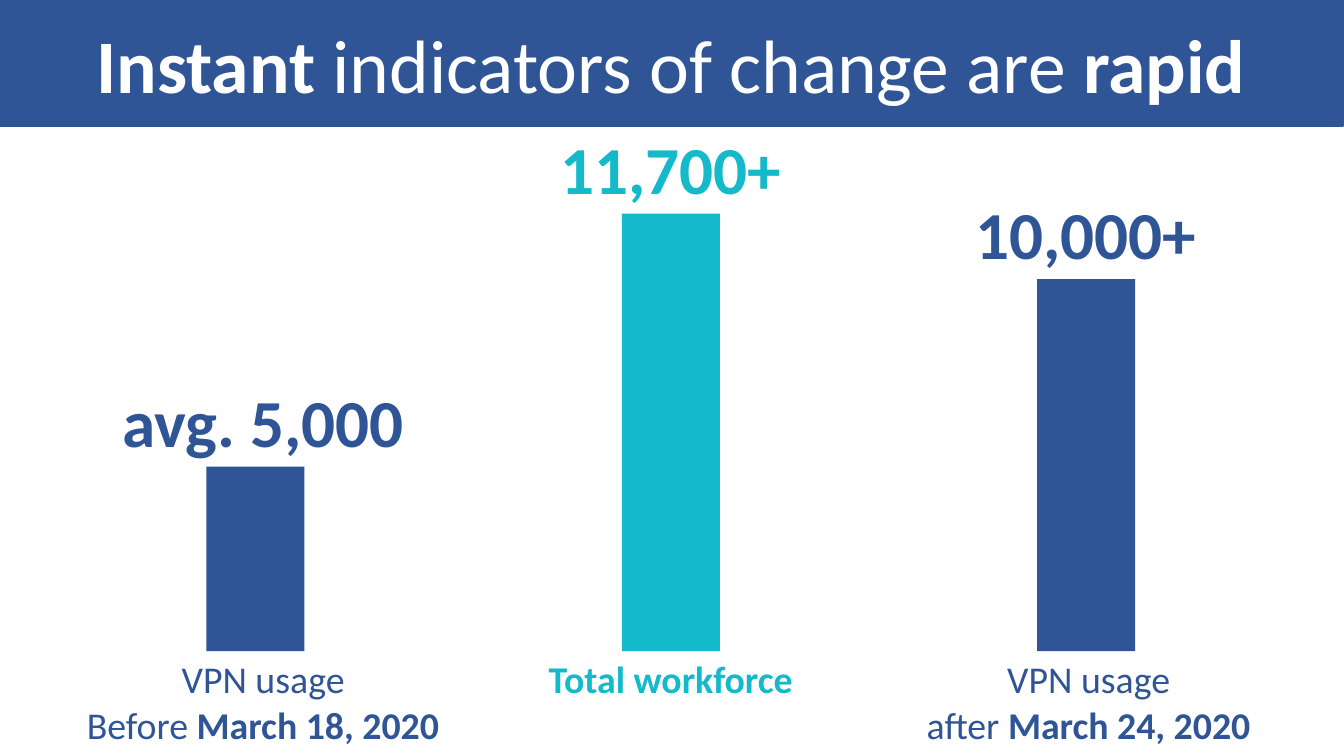
from dataclasses import dataclass

from pptx import Presentation
from pptx.dml.color import RGBColor
from pptx.enum.shapes import MSO_SHAPE
from pptx.enum.text import MSO_ANCHOR, MSO_AUTO_SIZE, PP_ALIGN
from pptx.util import Pt

RECT = MSO_SHAPE.RECTANGLE
MIDDLE = MSO_ANCHOR.MIDDLE
CENTER = PP_ALIGN.CENTER
NO_FIT = MSO_AUTO_SIZE.NONE
GROW = MSO_AUTO_SIZE.SHAPE_TO_FIT_TEXT
TITLE_ONLY = 5


@dataclass(frozen=True)
class Theme:
    font: str = "Calibri"
    blue: RGBColor = RGBColor(0x2F, 0x55, 0x97)
    edge: RGBColor = RGBColor(0x32, 0x54, 0x91)
    teal: RGBColor = RGBColor(0x14, 0xB9, 0xCA)
    white: RGBColor = RGBColor(0xFF, 0xFF, 0xFF)
    title: int = 54
    value: int = 48
    caption: int = 27


THEME = Theme()

BASELINE = 465.1
BAR_W = 70
FIRST_CENTER, PITCH = 182.5, 296.65
VALUE_W, VALUE_H = 228.2, 65.4
CAPTION_LINE = 32.4
CAPTION_PAD = 7.6

# Each bar: height, colour, value, value shift, caption lines, caption width, caption shift.
# Caption lines hold (text, bold) runs; shifts are measured from the bar's centre.
BARS = [
    (131.8, THEME.blue, "avg. 5,000", 5.7,
     [[("VPN usage", False)], [("Before ", False), ("March 18, 2020", True)]], 332.6, 5.4),
    (312.5, THEME.teal, "11,700+", 0,
     [[("Total workforce", True)]], VALUE_W, 0),
    (265.7, THEME.blue, "10,000+", 0,
     [[("VPN usage", False)], [("after", False), (" March 24, 2020", True)]], 318.2, 1.8),
]


def write_lines(tf, lines, size, color):
    """Fill a text frame with centred paragraphs of (text, bold) runs."""
    tf.word_wrap = True
    for i, runs in enumerate(lines):
        p = tf.add_paragraph() if i else tf.paragraphs[0]
        p.alignment = CENTER
        p.font.name = THEME.font
        p.font.size = Pt(size)
        p.font.color.rgb = color
        for text, bold in runs:
            r = p.add_run()
            r.text = text
            r.font.bold = bold


def add_title(s, runs):
    sp = s.shapes.title
    sp.left, sp.top, sp.width, sp.height = Pt(-0.7), Pt(0), Pt(960), Pt(90)
    sp.fill.solid()
    sp.fill.fore_color.rgb = THEME.blue
    sp.line.color.rgb = THEME.edge
    sp.line.width = Pt(1)
    tf = sp.text_frame
    tf.auto_size = NO_FIT
    tf.vertical_anchor = MIDDLE
    write_lines(tf, [runs], THEME.title, THEME.white)


def add_label(s, center, top, width, height, lines, size, color):
    sp = s.shapes.add_textbox(Pt(center - width / 2), Pt(top), Pt(width), Pt(height))
    write_lines(sp.text_frame, lines, size, color)
    sp.text_frame.auto_size = GROW


def add_bar(s, center, height, color):
    sp = s.shapes.add_shape(RECT, Pt(center - BAR_W / 2), Pt(BASELINE - height),
                            Pt(BAR_W), Pt(height))
    sp.shadow.inherit = False
    sp.fill.solid()
    sp.fill.fore_color.rgb = color
    sp.line.fill.background()


def main():
    prs = Presentation()
    prs.slide_width, prs.slide_height = Pt(960), Pt(540)
    s = prs.slides.add_slide(prs.slide_layouts[TITLE_ONLY])

    add_title(s, [("Instant ", True), ("indicators of change are ", False), ("rapid", True)])
    for i, (height, color, value, value_dx, caption, caption_w, caption_dx) in enumerate(BARS):
        center = FIRST_CENTER + i * PITCH
        add_bar(s, center, height, color)
        add_label(s, center + value_dx, BASELINE - height - VALUE_H, VALUE_W, VALUE_H,
                  [[(value, True)]], THEME.value, color)
        add_label(s, center + caption_dx, BASELINE, caption_w,
                  CAPTION_PAD + CAPTION_LINE * len(caption), caption, THEME.caption, color)

    prs.save("out.pptx")


if __name__ == "__main__":
    main()
